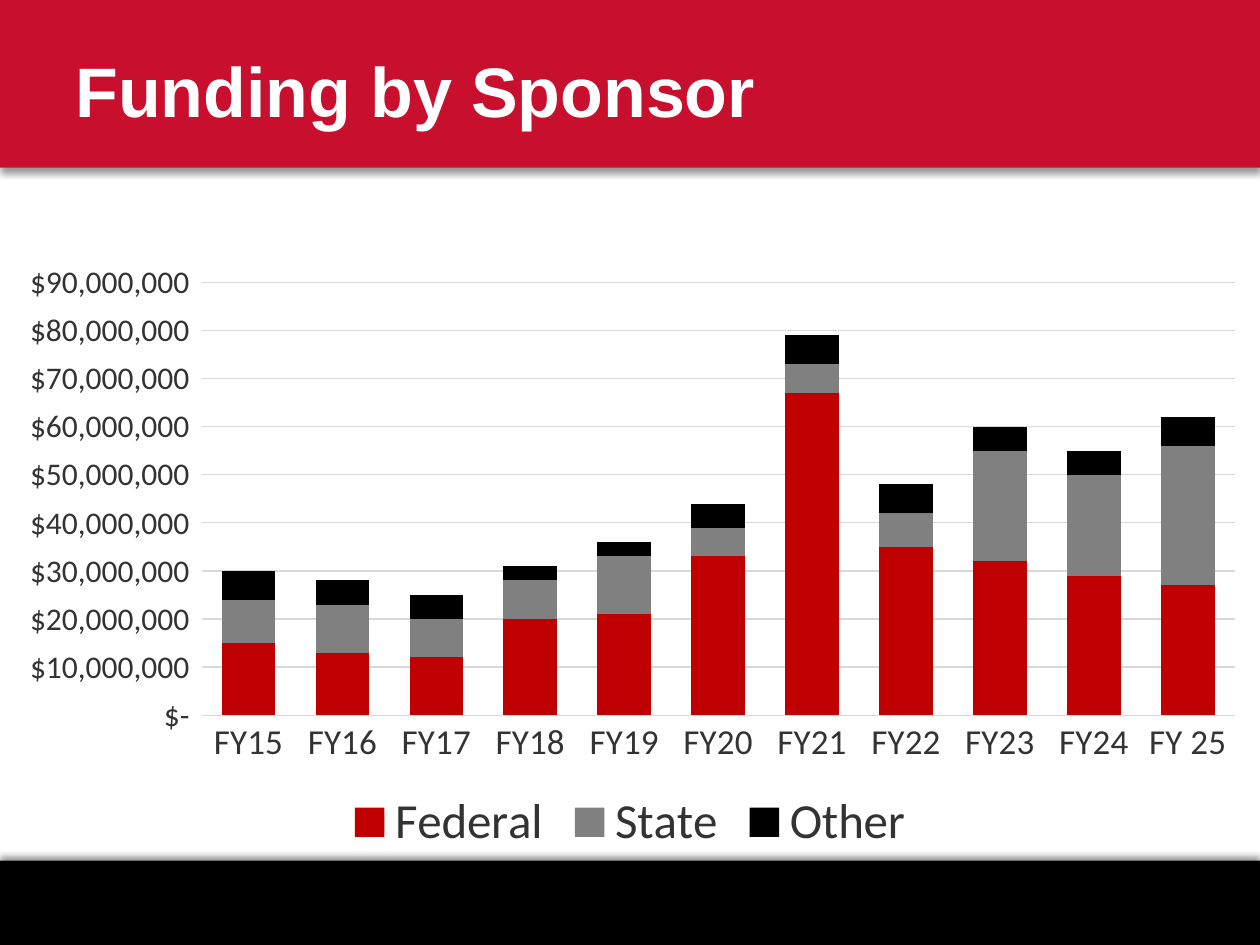
from dataclasses import dataclass

from lxml import etree
from pptx import Presentation
from pptx.chart.data import CategoryChartData
from pptx.dml.color import RGBColor
from pptx.enum.chart import XL_CHART_TYPE, XL_LEGEND_POSITION, XL_TICK_MARK
from pptx.enum.shapes import MSO_SHAPE
from pptx.enum.text import MSO_ANCHOR
from pptx.oxml import parse_xml
from pptx.oxml.ns import nsdecls, qn
from pptx.util import Cm, Pt

STACKED = XL_CHART_TYPE.COLUMN_STACKED
LEGEND_BOTTOM = XL_LEGEND_POSITION.BOTTOM
NO_TICK = XL_TICK_MARK.NONE
RECTANGLE = MSO_SHAPE.RECTANGLE
MIDDLE = MSO_ANCHOR.MIDDLE


@dataclass(frozen=True)
class Theme:
    """Colours, fonts and type sizes of the slide."""
    banner: str = "C8102E"
    black: str = "000000"
    white: str = "FFFFFF"
    label: str = "333333"
    rule: str = "D9D9D9"
    federal: str = "C00000"
    state: str = "808080"
    title_font: str = "Arial"
    chart_font: str = "Calibri"
    title_size: int = 40
    legend_size: int = 28
    category_size: int = 20
    value_size: int = 18
    base_size: int = 10


THEME = Theme()
SLIDE_WIDTH, SLIDE_HEIGHT = 25.4, 19.05
MILLION = 1_000_000
DOLLARS = r'_(\$* #,##0_);_(\$* \(#,##0\);_(\$* "-"_);_(@_)'
YEARS = [f"FY{year}" for year in range(15, 25)] + ["FY 25"]
SPONSORS = [
    ("Federal", THEME.federal, [15, 13, 12, 20, 21, 33, 67, 35, 32, 29, 27]),
    ("State", THEME.state, [9, 10, 8, 8, 12, 6, 6, 7, 23, 21, 29]),
    ("Other", THEME.black, [6, 5, 5, 3, 3, 5, 6, 6, 5, 5, 6]),
]


def set_font(font, name, size, color, bold=False):
    """Apply a typeface, size, colour and weight."""
    font.name, font.size, font.bold = name, Pt(size), bold
    font.color.rgb = RGBColor.from_string(color)


def set_rule(line):
    """Give a chart line the thin grey rule style."""
    line.color.rgb = RGBColor.from_string(THEME.rule)
    line.width = Pt(0.75)


def add_band(slide, box, color, shadow_degrees):
    """Draw a full-width band with a soft shadow cast in one direction."""
    band = slide.shapes.add_shape(RECTANGLE, *map(Cm, box))
    band.fill.solid()
    band.fill.fore_color.rgb = RGBColor.from_string(color)
    band.line.fill.background()
    band.shadow.inherit = False
    effects = band.element.spPr.find(qn("a:effectLst"))
    effects.append(parse_xml(
        f'<a:outerShdw {nsdecls("a")} blurRad="{Pt(4)}" dist="{Pt(3)}" '
        f'dir="{shadow_degrees * 60000}" rotWithShape="0">'
        f'<a:srgbClr val="{THEME.black}"><a:alpha val="40000"/></a:srgbClr>'
        '</a:outerShdw>'))


def add_header(slide, box, title):
    """Draw the banner and its title."""
    left, top, width, height = box
    add_band(slide, box, THEME.banner, 90)
    heading = slide.shapes.add_textbox(
        Cm(left + 1.27), Cm(top + 0.43), Cm(width - 4.45), Cm(height - 0.64))
    frame = heading.text_frame
    frame.word_wrap = True
    frame.vertical_anchor = MIDDLE
    run = frame.paragraphs[0].add_run()
    run.text = title
    set_font(run.font, THEME.title_font, THEME.title_size, THEME.white, True)


def place_plot(chart, **fractions):
    """Fix the inner plot area as fractions of the chart."""
    plot_area = chart.element.find(".//" + qn("c:plotArea"))
    for automatic in plot_area.findall(qn("c:layout")):
        plot_area.remove(automatic)
    layout = etree.Element(qn("c:layout"))
    manual = etree.SubElement(layout, qn("c:manualLayout"))
    settings = {"layoutTarget": "inner", "xMode": "edge", "yMode": "edge", **fractions}
    for tag, value in settings.items():
        etree.SubElement(manual, qn(f"c:{tag}")).set("val", str(value))
    plot_area.insert(0, layout)


def style_axes(chart):
    """Set the scale, labels and rules of both axes."""
    years, dollars = chart.category_axis, chart.value_axis
    for axis, size in ((years, THEME.category_size), (dollars, THEME.value_size)):
        axis.major_tick_mark = axis.minor_tick_mark = NO_TICK
        set_font(axis.tick_labels.font, THEME.chart_font, size, THEME.label)
    set_rule(years.format.line)
    dollars.format.line.fill.background()
    dollars.minimum_scale, dollars.maximum_scale = 0, 90 * MILLION
    dollars.major_unit = 10 * MILLION
    dollars.has_major_gridlines = True
    set_rule(dollars.major_gridlines.format.line)
    dollars.tick_labels.number_format = DOLLARS
    dollars.tick_labels.number_format_is_linked = False


def add_funding_chart(slide, box):
    """Draw funding by year as columns stacked by sponsor."""
    funding = CategoryChartData(number_format=DOLLARS)
    funding.categories = YEARS
    for sponsor, _, millions in SPONSORS:
        funding.add_series(sponsor, [amount * MILLION for amount in millions])
    chart = slide.shapes.add_chart(STACKED, *map(Cm, box), funding).chart
    set_font(chart.font, THEME.chart_font, THEME.base_size, THEME.black)
    chart.has_title = False
    chart.has_legend = True
    chart.legend.position = LEGEND_BOTTOM
    chart.legend.include_in_layout = False
    set_font(chart.legend.font, THEME.chart_font, THEME.legend_size, THEME.label)
    style_axes(chart)
    plot = chart.plots[0]
    plot.gap_width, plot.overlap, plot.vary_by_categories = 75, 100, False
    for series, (_, color, _) in zip(plot.series, SPONSORS):
        series.format.fill.solid()
        series.format.fill.fore_color.rgb = RGBColor.from_string(color)
        series.invert_if_negative = False
    place_plot(chart, x=0.16, y=0.05, w=0.82, h=0.71)


def main():
    """Build and save the slide."""
    deck = Presentation()
    deck.slide_width, deck.slide_height = Cm(SLIDE_WIDTH), Cm(SLIDE_HEIGHT)
    slide = deck.slides.add_slide(deck.slide_layouts[6])
    footer_height = 1.7
    add_band(slide, (0, SLIDE_HEIGHT - footer_height, SLIDE_WIDTH, footer_height),
             THEME.black, 270)
    add_header(slide, (0, 0, SLIDE_WIDTH, 3.38), "Funding by Sponsor")
    add_funding_chart(slide, (0, 5.08, SLIDE_WIDTH, 12.29))
    deck.save("out.pptx")


if __name__ == "__main__":
    main()
